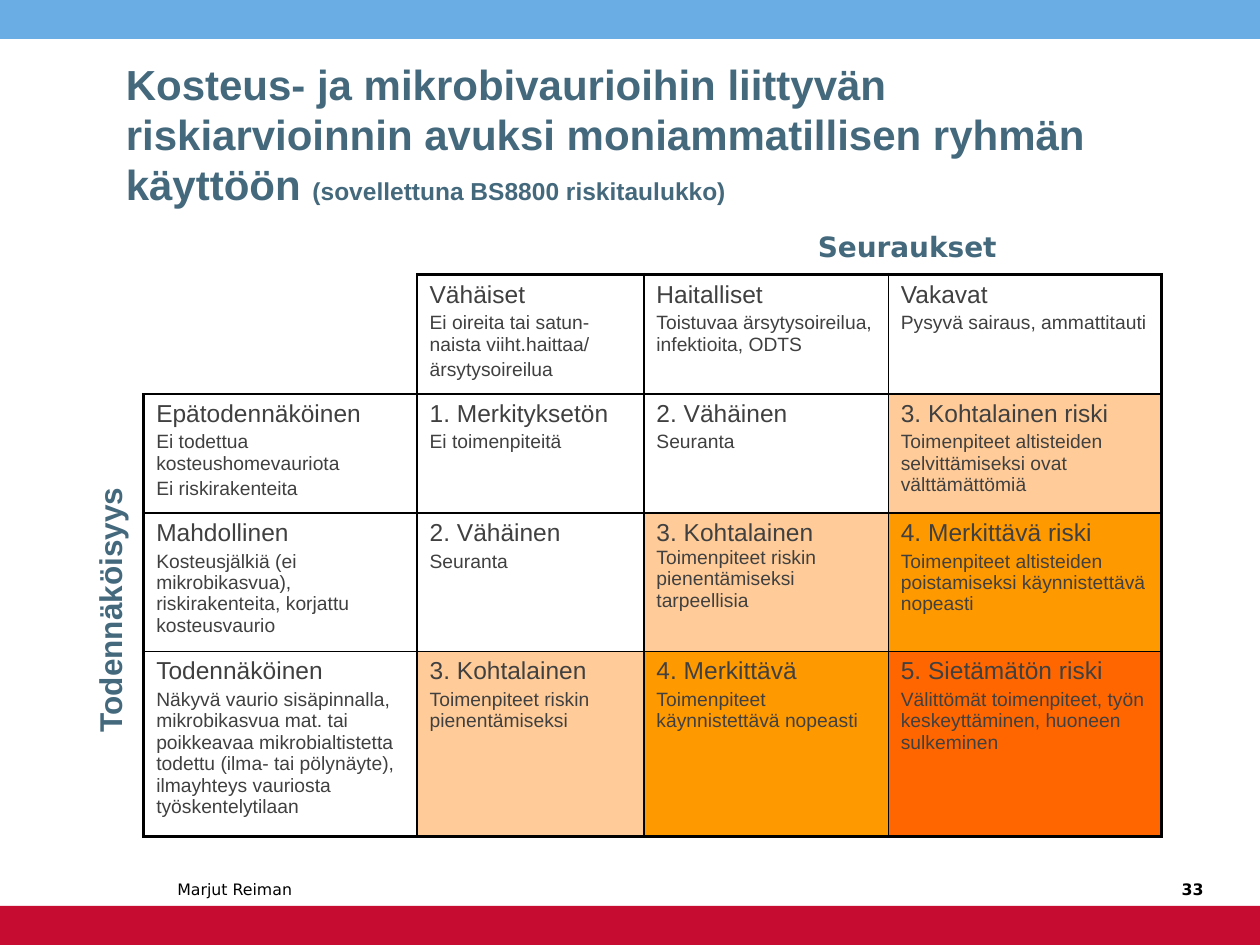
from lxml.etree import SubElement as Sub
from pptx import Presentation
from pptx.dml.color import RGBColor
from pptx.enum.shapes import MSO_SHAPE as Shape
from pptx.enum.text import MSO_ANCHOR as Anchor, PP_ALIGN as Align
from pptx.oxml.ns import qn
from pptx.util import Inches, Pt

BLUE = RGBColor(0x6A, 0xAD, 0xE4)
RED = RGBColor(0xC6, 0x0C, 0x30)
SLATE = RGBColor(0x44, 0x69, 0x7D)
GREY = RGBColor(0x40, 0x40, 0x40)
BLACK = RGBColor(0, 0, 0)
PEACH = RGBColor(0xFF, 0xCC, 0x99)
AMBER = RGBColor(0xFF, 0x99, 0x00)
FIRE = RGBColor(0xFF, 0x66, 0x00)

SANS, WIDE = "Arial", "DejaVu Sans"
BANDS = [(0, BLUE), (7.19, RED)]
TITLE = [
    ("Kosteus- ja mikrobivaurioihin liittyvän riskiarvioinnin avuksi "
     "moniammatillisen ryhmän käyttöön ", 24),
    ("(sovellettuna BS8800 riskitaulukko)", 14),
]
COLS = [2.17, 1.8, 1.94, 2.17]
ROWS = [0.89, 0.89, 1.03, 1.47]
GRID = [
    [
        [],
        ["Vähäiset", "Ei oireita tai satun-naista viiht.haittaa/", "ärsytysoireilua"],
        ["Haitalliset", "Toistuvaa ärsytysoireilua, infektioita, ODTS"],
        ["Vakavat", "Pysyvä sairaus, ammattitauti"],
    ],
    [
        ["Epätodennäköinen", "Ei todettua kosteushomevauriota", "Ei riskirakenteita"],
        ["1. Merkityksetön", "Ei toimenpiteitä"],
        ["2. Vähäinen", "Seuranta"],
        ["3. Kohtalainen riski",
         "Toimenpiteet altisteiden selvittämiseksi ovat välttämättömiä"],
    ],
    [
        ["Mahdollinen",
         "Kosteusjälkiä (ei mikrobikasvua), riskirakenteita, korjattu kosteusvaurio"],
        ["2. Vähäinen", "Seuranta"],
        ["3. Kohtalainen ", "Toimenpiteet riskin pienentämiseksi tarpeellisia"],
        ["4. Merkittävä riski",
         "Toimenpiteet altisteiden poistamiseksi käynnistettävä nopeasti"],
    ],
    [
        ["Todennäköinen",
         "Näkyvä vaurio sisäpinnalla, mikrobikasvua mat. tai poikkeavaa "
         "mikrobialtistetta todettu (ilma- tai pölynäyte), ilmayhteys vauriosta "
         "työskentelytilaan"],
        ["3. Kohtalainen", "Toimenpiteet riskin pienentämiseksi"],
        ["4. Merkittävä", "Toimenpiteet käynnistettävä nopeasti"],
        ["5. Sietämätön riski",
         "Välittömät toimenpiteet, työn keskeyttäminen, huoneen sulkeminen"],
    ],
]
RISKS = {3: PEACH, 4: AMBER, 5: FIRE}
INLINE = (2, 2)


def add_run(para, text, size, font, color, bold=False):
    run = para.add_run()
    run.text = text
    run.font.size = Pt(size)
    run.font.name = font
    run.font.bold = bold
    run.font.color.rgb = color


def add_box(slide, at, runs, font, color, bold=True, anchor=Anchor.TOP,
            align=Align.LEFT, wrap=True):
    box = slide.shapes.add_textbox(*map(Inches, at))
    frame = box.text_frame
    frame.word_wrap = wrap
    frame.vertical_anchor = anchor
    para = frame.paragraphs[0]
    para.alignment = align
    for text, size in runs:
        add_run(para, text, size, font, color, bold)
    return box


def add_edge(cell, side, width):
    line = Sub(cell._tc.get_or_add_tcPr(), qn(f"a:ln{side}"), w=str(Pt(width)))
    if width:
        fill = Sub(line, qn("a:solidFill"))
        Sub(fill, qn("a:srgbClr"), val=str(BLACK))
    else:
        Sub(line, qn("a:noFill"))


def fill_cell(cell, row, col, parts):
    last_row, last_col = len(ROWS) - 1, len(COLS) - 1
    outer = 2.25 if parts else 0
    add_edge(cell, "L", outer if col == 0 else 1)
    add_edge(cell, "R", outer if col == last_col else 1)
    add_edge(cell, "T", outer if row == 0 else 1)
    add_edge(cell, "B", outer if row == last_row else 1)
    risk = int(parts[0][0]) if row and col else 0
    if risk in RISKS:
        cell.fill.solid()
        cell.fill.fore_color.rgb = RISKS[risk]
    else:
        cell.fill.background()
    frame = cell.text_frame
    para = frame.paragraphs[0]
    for i, text in enumerate(parts):
        if i and (row, col) != INLINE:
            para = frame.add_paragraph()
            para.space_before = Pt(2.2)
        add_run(para, text, 11 if i else 14, SANS, GREY)


def add_grid(slide):
    table = slide.shapes.add_table(
        len(ROWS), len(COLS), Inches(1.14), Inches(2.18),
        Inches(sum(COLS)), Inches(sum(ROWS))).table
    table.first_row = table.horz_banding = False
    for col, width in zip(table.columns, COLS):
        col.width = Inches(width)
    for row, height in zip(table.rows, ROWS):
        row.height = Inches(height)
    for r, row in enumerate(GRID):
        for c, parts in enumerate(row):
            fill_cell(table.cell(r, c), r, c, parts)


def main():
    deck = Presentation()
    deck.slide_width, deck.slide_height = Inches(10), Inches(7.5)
    slide = deck.slides.add_slide(deck.slide_layouts[6])
    for top, color in BANDS:
        band = slide.shapes.add_shape(
            Shape.RECTANGLE, 0, Inches(top), Inches(10), Inches(0.31))
        band.shadow.inherit = False
        band.fill.solid()
        band.fill.fore_color.rgb = color
        band.line.fill.background()
    add_box(slide, (0.9, 0.53, 8.19, 1.18), TITLE, SANS, SLATE, anchor=Anchor.BOTTOM)
    add_box(slide, (1.31, 6.78, 1.97, 0.4), [("Marjut Reiman", 9)], WIDE, BLACK,
            bold=False, anchor=Anchor.BOTTOM)
    add_box(slide, (9.1, 6.78, 0.55, 0.4), [("33", 9)], WIDE, BLACK,
            anchor=Anchor.BOTTOM, align=Align.RIGHT)
    add_grid(slide)
    add_box(slide, (5.94, 1.77, 2.52, 0.37), [("Seuraukset", 16)], WIDE, SLATE,
            align=Align.CENTER)
    side = add_box(slide, (-0.21, 4.63, 2.16, 0.4), [("Todennäköisyys", 18)],
                   SANS, SLATE, wrap=False)
    side.rotation = 270
    deck.save("out.pptx")


if __name__ == "__main__":
    main()
